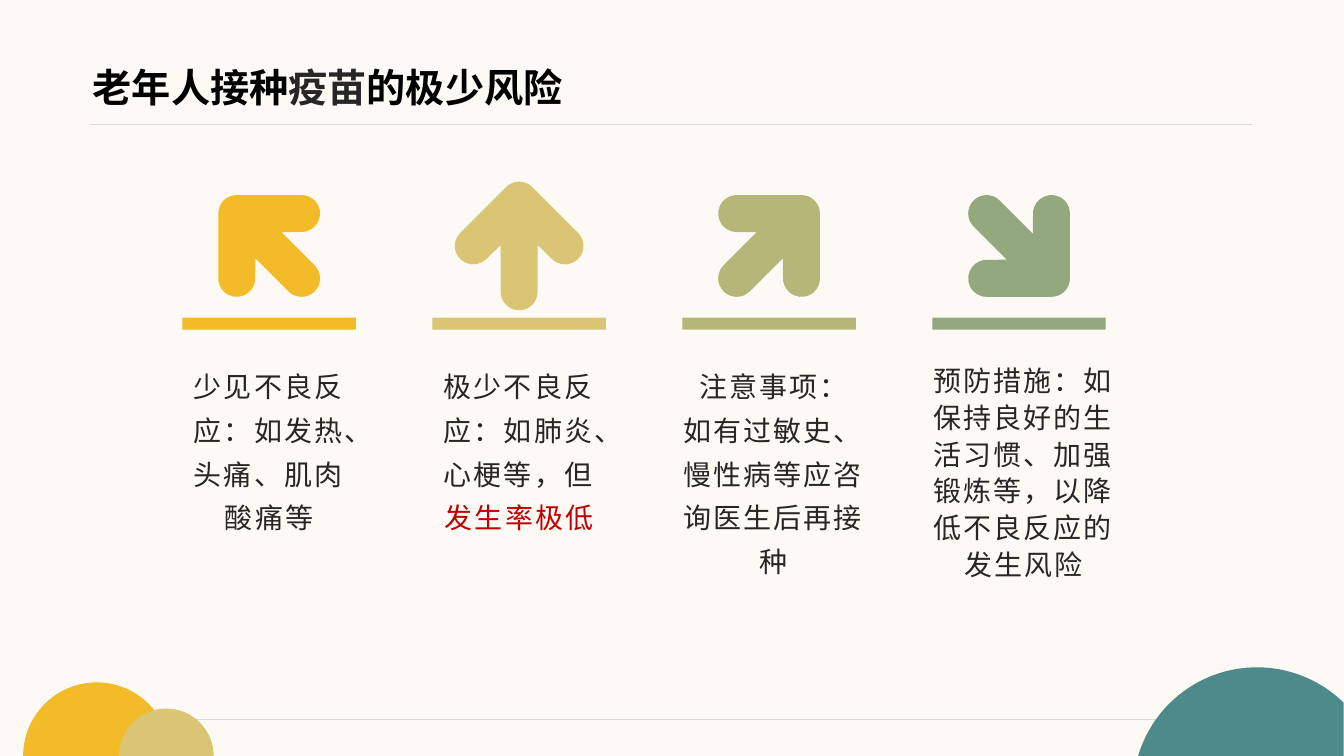
"""Build the slide on the rare risks of vaccination for older people."""
from itertools import pairwise
from math import cos, radians, sin, tan

from lxml.etree import SubElement
from pptx import Presentation
from pptx.dml.color import RGBColor
from pptx.enum.shapes import MSO_CONNECTOR, MSO_SHAPE
from pptx.enum.text import MSO_ANCHOR, PP_ALIGN
from pptx.oxml.ns import qn
from pptx.util import Inches, Pt

COLORS = {
    "background": "FDFAF5", "rule": "D9D9D9", "title": "000000", "text": "262626",
    "alert": "C00000", "yellow": "F3BB28", "sand": "D9C573", "olive": "B6B679",
    "sage": "94A87F", "teal": "4F8A8B",
}


def arc(center_x, center_y, radius, *degrees):
    """Return a start point and one cubic curve between each pair of angles."""
    angles = [radians(degree) for degree in degrees]
    ends = [(center_x + radius * cos(a), center_y + radius * sin(a)) for a in angles]
    segments = [[ends[0]]]
    for (first, last), ((x1, y1), (x2, y2)) in zip(pairwise(angles), pairwise(ends)):
        handle = radius * 4 / 3 * tan((last - first) / 4)
        segments.append([
            (x1 - handle * sin(first), y1 + handle * cos(first)),
            (x2 + handle * sin(last), y2 - handle * cos(last)),
            (x2, y2),
        ])
    return segments


def paint_outline(shapes, segments, color):
    """Draw a filled closed outline of lines and cubic curves given in inches."""
    ends = [(Inches(segment[-1][0]), Inches(segment[-1][1])) for segment in segments]
    builder = shapes.build_freeform(*ends[0])
    builder.add_line_segments(ends[1:], close=True)
    shape = builder.convert_to_shape()
    steps = list(shape._element.iter(qn("a:lnTo")))
    for step, segment in zip(steps, segments[1:]):
        if len(segment) == 3:
            step.tag = qn("a:cubicBezTo")
            for position, (x, y) in enumerate(segment[:2]):
                point = SubElement(step, qn("a:pt"), x=str(Inches(x) - shape.left),
                                   y=str(Inches(y) - shape.top))
                step.insert(position, point)
    shape.shadow.inherit = False
    shape.fill.solid()
    shape.fill.fore_color.rgb = RGBColor.from_string(COLORS[color])
    shape.line.fill.background()
    return shape


presentation = Presentation()
presentation.slide_width = Inches(40 / 3)
presentation.slide_height = Inches(7.5)
slide = presentation.slides.add_slide(presentation.slide_layouts[5])
slide.background.fill.solid()
slide.background.fill.fore_color.rgb = RGBColor.from_string(COLORS["background"])
shapes = slide.shapes

for left, right, y in [(0.89, 12.42, 1.23), (1.69, 11.55, 7.14)]:
    rule = shapes.add_connector(
        MSO_CONNECTOR.STRAIGHT, Inches(left), Inches(y), Inches(right), Inches(y))
    rule.line.color.rgb = RGBColor.from_string(COLORS["rule"])
    rule.line.width = Pt(0.5)
    SubElement(rule._element.spPr, qn("a:effectLst"))

paint_outline(shapes, arc(0.96, 7.5, 0.73, 180, 270, 360), "yellow")
paint_outline(shapes, arc(1.65, 7.5, 0.47, 180, 270, 360), "sand")
paint_outline(
    shapes, arc(12.47, 7.85, 1.23, 196.5, 270, 314.4) + [[(13.33, 6.98)], [(13.33, 7.5)]], "teal")

title = shapes.title
title.left, title.top, title.width, title.height = (
    Inches(0.92), Inches(0.39), Inches(11.5), Inches(0.94))
frame = title.text_frame
frame.margin_left = frame.margin_top = frame.margin_right = frame.margin_bottom = 0
frame.vertical_anchor = MSO_ANCHOR.MIDDLE
paragraph = frame.paragraphs[0]
paragraph.alignment = PP_ALIGN.LEFT
paragraph.font.name = "Arial"
paragraph.font.size = Pt(28)
paragraph.font.bold = True
SubElement(paragraph.font._element, qn("a:ea"), typeface="Noto Sans CJK SC")
for text, color in [("老年人接种", "title"), ("疫苗", "text"), ("的极少风险", "title")]:
    run = paragraph.add_run()
    run.text = text
    run.font.color.rgb = RGBColor.from_string(COLORS[color])

REACH, HALF = 0.455, 0.183
left_arrow = (
    arc(-REACH, 0, HALF, 135, 180, 225)
    + arc(0, -REACH, HALF, 225, 270, 405)
    + [[(-0.01, -HALF)]]
    + arc(REACH, 0, HALF, -90, 0, 90)
    + [[(-0.01, HALF)]]
    + arc(0, REACH, HALF, -45, 90, 135)
)

columns = [
    ("yellow", 1, 45, 1.98, 1.3, [[("少见不良反应：如发热、头痛、肌肉酸痛等", "text")]]),
    ("sand", 1, 90, 1.98, 1.3,
     [[("极少不良反应：如肺炎、心梗等，但", "text"), ("发生率极低", "alert")]]),
    ("olive", -1, 315, 2.07, 1.3,
     [[("注意事项：", "text")], [("如有过敏史、慢性病等应咨询医生后再接种", "text")]]),
    ("sage", -1, 45, 2.07, 1.1,
     [[("预防措施：如保持良好的生活习惯、加强锻炼等，以降低不良反应的发生风险", "text")]]),
]
for index, (color, side, turn, width, spacing, paragraphs) in enumerate(columns):
    center = 2.67 + 2.48 * index
    segments = [[(center + side * x, 2.44 + y) for x, y in segment] for segment in left_arrow]
    arrow = paint_outline(shapes, segments, color)
    arrow.rotation = turn

    box = shapes.add_textbox(Inches(center - 0.99), Inches(3.52), Inches(width), Inches(3.02))
    frame = box.text_frame
    frame.word_wrap = True
    for number, runs in enumerate(paragraphs):
        paragraph = frame.add_paragraph() if number else frame.paragraphs[0]
        paragraph.alignment = PP_ALIGN.CENTER
        paragraph.line_spacing = spacing
        paragraph.font.name = "Noto Sans CJK SC"
        paragraph.font.size = Pt(20)
        paragraph.font._element.set("spc", "150")
        SubElement(paragraph.font._element, qn("a:ea"), typeface="Noto Sans CJK SC")
        for text, text_color in runs:
            run = paragraph.add_run()
            run.text = text
            run.font.color.rgb = RGBColor.from_string(COLORS[text_color])

    bar = shapes.add_shape(
        MSO_SHAPE.RECTANGLE, Inches(center - 0.86), Inches(3.15), Inches(1.72), Inches(0.12))
    bar.shadow.inherit = False
    bar.fill.solid()
    bar.fill.fore_color.rgb = RGBColor.from_string(COLORS[color])
    bar.line.fill.background()

presentation.save("out.pptx")
